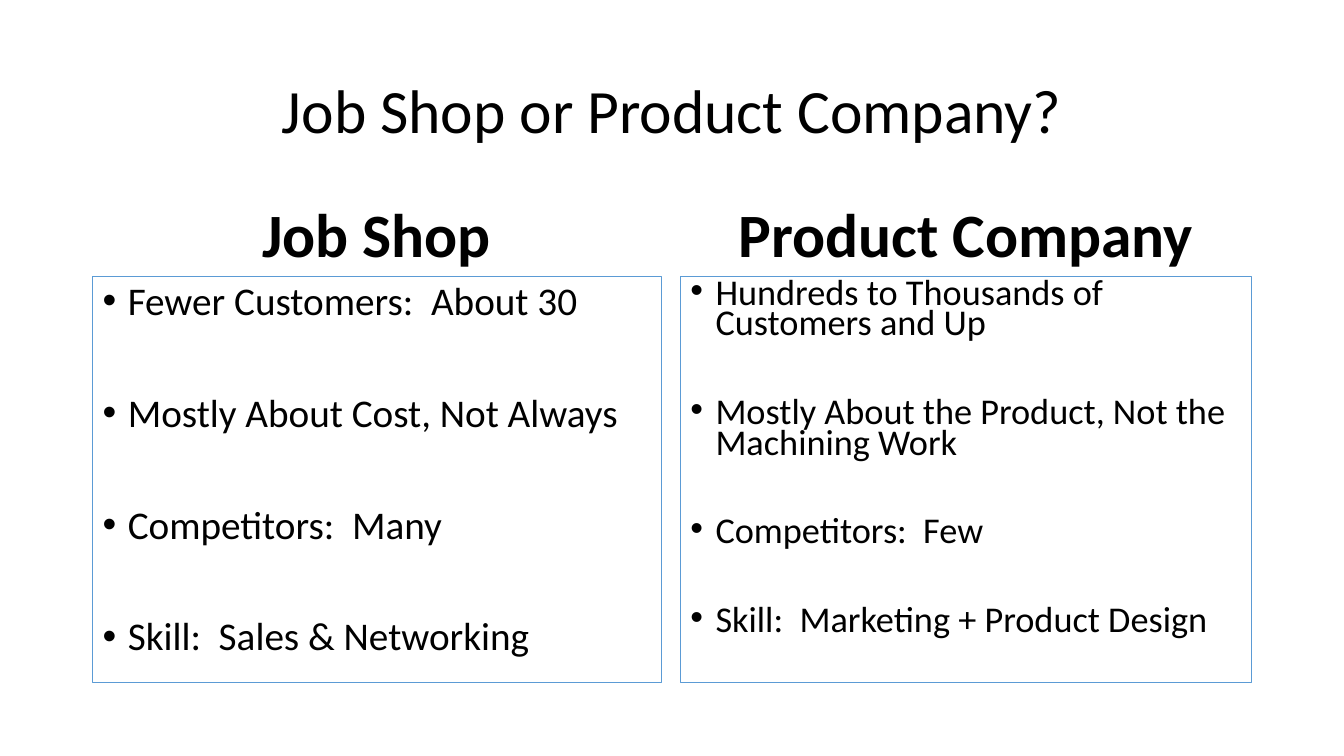
from dataclasses import dataclass

from lxml import etree
from pptx import Presentation
from pptx import util as u
from pptx.dml.color import RGBColor
from pptx.enum import shapes, text
from pptx.oxml import ns


@dataclass(frozen=True)
class Theme:
    font: str = "Calibri"
    ink: RGBColor = RGBColor(0x00, 0x00, 0x00)
    border: RGBColor = RGBColor(0x5B, 0x9B, 0xD5)
    heading_size: float = 44
    line_spacing: float = 0.9
    border_width: float = 0.75
    bullet_indent: float = 18


@dataclass(frozen=True)
class Column:
    heading: str
    points: tuple[str, ...]
    left: float
    width: float
    size: float
    line_spacing: float
    gap: float


THEME = Theme()
MARGIN = 66.25
HEADING_TOP, HEADING_HEIGHT = 132.4, 64.9
PANEL_TOP, PANEL_HEIGHT = 197.3, 290.1

COLUMNS = (
    Column(
        "Job Shop",
        (
            "Fewer Customers:  About 30",
            "Mostly About Cost, Not Always",
            "Competitors:  Many",
            "Skill:  Sales & Networking",
        ),
        MARGIN, 406.1, 28, 0.9, 49.75,
    ),
    Column(
        "Product Company",
        (
            "Hundreds to Thousands of Customers and Up",
            "Mostly About the Product, Not the Machining Work",
            "Competitors:  Few",
            "Skill:  Marketing + Product Design",
        ),
        486, 408.1, 25.9, 0.7, 41.5,
    ),
)


def style_paragraph(paragraph, size: float, spacing: float, align, bold: bool = False) -> None:
    paragraph.alignment = align
    paragraph.line_spacing = spacing
    paragraph.space_before = u.Pt(0)
    for run in paragraph.runs:
        run.font.name = THEME.font
        run.font.size = u.Pt(size)
        run.font.bold = bold
        run.font.color.rgb = THEME.ink


def add_bullet(paragraph) -> None:
    properties = paragraph._p.get_or_add_pPr()
    indent = u.Pt(THEME.bullet_indent)
    properties.set("marL", str(indent))
    properties.set("indent", str(-indent))
    etree.SubElement(properties, ns.qn("a:buFont"), typeface="Arial")
    etree.SubElement(properties, ns.qn("a:buChar"), char="•")


def write_heading(shape, wording: str, anchor, bold: bool) -> None:
    frame = shape.text_frame
    frame.word_wrap = True
    frame.auto_size = text.MSO_AUTO_SIZE.NONE
    frame.vertical_anchor = anchor
    frame.text = wording
    style_paragraph(frame.paragraphs[0], THEME.heading_size, THEME.line_spacing,
                    text.PP_ALIGN.CENTER, bold)


def draw_column(slide, column: Column) -> None:
    left, width = u.Pt(column.left), u.Pt(column.width)
    heading = slide.shapes.add_textbox(left, u.Pt(HEADING_TOP), width, u.Pt(HEADING_HEIGHT))
    write_heading(heading, column.heading, text.MSO_ANCHOR.BOTTOM, True)

    panel = slide.shapes.add_shape(shapes.MSO_SHAPE.RECTANGLE, left, u.Pt(PANEL_TOP),
                                   width, u.Pt(PANEL_HEIGHT))
    panel.shadow.inherit = False
    panel.fill.background()
    panel.line.color.rgb = THEME.border
    panel.line.width = u.Pt(THEME.border_width)

    frame = panel.text_frame
    frame.word_wrap = True
    frame.vertical_anchor = text.MSO_ANCHOR.TOP
    frame.text = "\n".join(column.points)
    for index, point in enumerate(frame.paragraphs):
        add_bullet(point)
        style_paragraph(point, column.size, column.line_spacing, text.PP_ALIGN.LEFT)
        if index:
            point.space_before = u.Pt(column.gap)


def main() -> None:
    deck = Presentation()
    deck.slide_width, deck.slide_height = u.Pt(960), u.Pt(540)
    slide = deck.slides.add_slide(deck.slide_layouts.get_by_name("Title Only"))
    title = slide.shapes.title
    title.left, title.top = u.Pt(MARGIN), u.Pt(28.75)
    title.width, title.height = u.Pt(828), u.Pt(104.4)
    write_heading(title, "Job Shop or Product Company?", text.MSO_ANCHOR.MIDDLE, False)
    for column in COLUMNS:
        draw_column(slide, column)
    deck.save("out.pptx")


if __name__ == "__main__":
    main()
